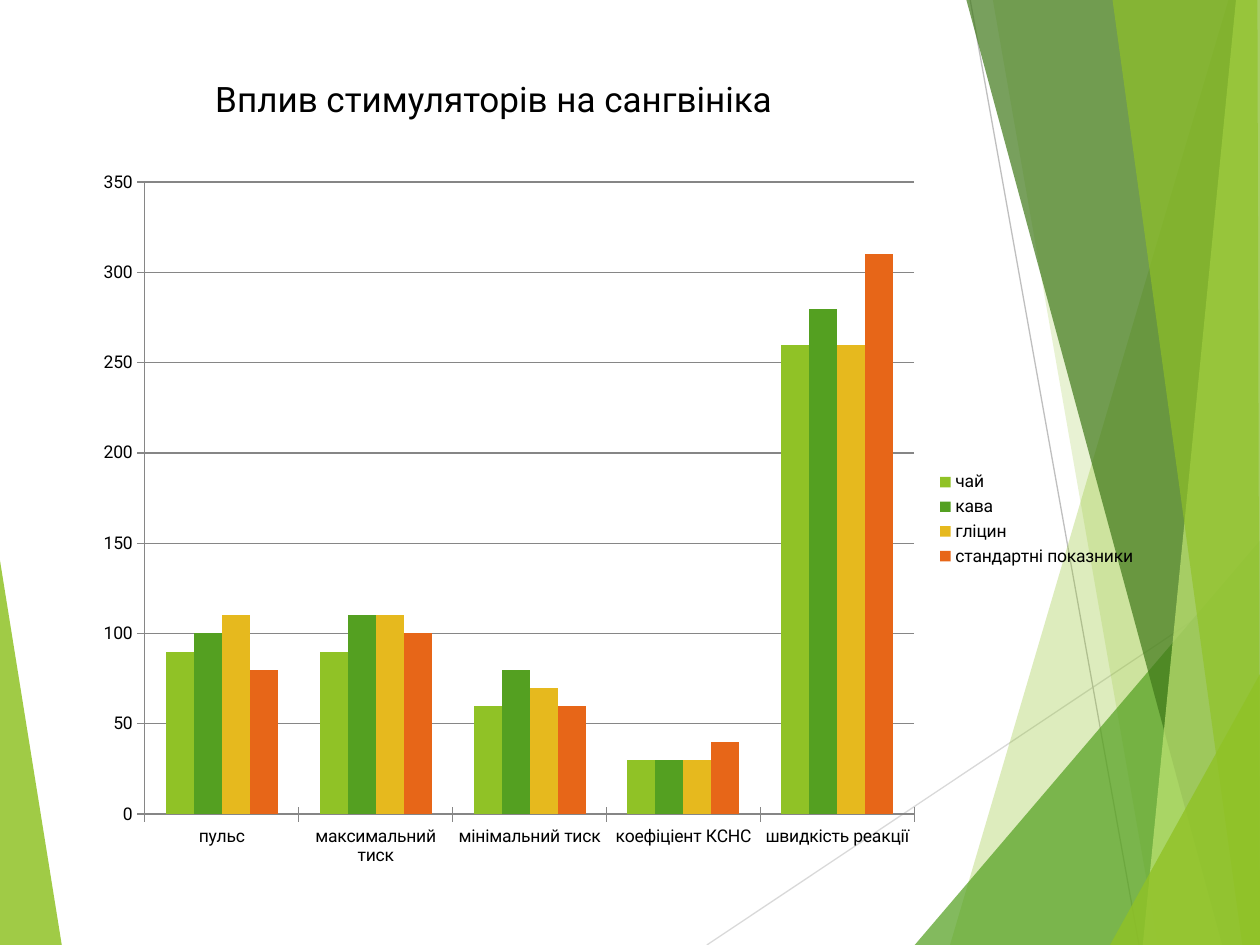
from typing import NamedTuple

from lxml.etree import SubElement
from pptx import Presentation
from pptx.chart.data import CategoryChartData
from pptx.dml.color import RGBColor
from pptx.enum.chart import XL_CHART_TYPE as ChartType
from pptx.enum.chart import XL_LEGEND_POSITION as LegendPosition
from pptx.enum.chart import XL_TICK_MARK as TickMark
from pptx.enum.shapes import MSO_CONNECTOR as Connector
from pptx.oxml import parse_xml
from pptx.oxml.ns import nsdecls, qn
from pptx.util import Inches, Pt

WIDTH, HEIGHT = Inches(10), Inches(7.5)
FONT = "Roboto"
BLACK, GREY = "000000", "868686"
LIME, GREEN, YELLOW, ORANGE = "90C226", "54A021", "E6B91E", "E76618"


class Facet(NamedTuple):
    """A translucent polygon with corners in percent of the slide."""
    corners: tuple
    color: str
    opacity: int


class Ray(NamedTuple):
    """A thin line with ends in percent of the slide."""
    start: tuple
    end: tuple
    color: str


class Series(NamedTuple):
    """One coloured set of columns."""
    name: str
    color: str
    values: tuple


def slant(top_x: float, bottom_x: float, color: str, opacity: int) -> Facet:
    """Describe a full-height facet between a slanted edge and the right side."""
    return Facet(((top_x, 0), (bottom_x, 100), (100, 100), (100, 0)), color, opacity)


def corner(bottom_x: float, right_y: float, color: str, opacity: int) -> Facet:
    """Describe a triangle in the bottom right corner."""
    return Facet(((bottom_x, 100), (100, right_y), (100, 100)), color, opacity)


DECORATION = (
    Facet(((0, 59.33), (4.9, 100), (0, 100)), LIME, 85),
    Ray((56.1, 100), (100, 60.93), "D9D9D9"),
    Ray((77, 0), (90.4, 100), "BFBFBF"),
    slant(97.5, 75.4, LIME, 30),
    slant(78.8, 91.9, LIME, 20),
    corner(72.6, 57.2, GREEN, 72),
    slant(76.7, 97, "3F7819", 70),
    slant(98.1, 90.7, "C0E474", 70),
    Facet(((88.3, 0), (98.6, 100), (100, 100), (99.8, 0)), LIME, 65),
    corner(88.1, 71.33, LIME, 80),
)
CATEGORIES = ("пульс", "максимальний тиск", "мінімальний тиск",
              "коефіціент КСНС", "швидкість реакції")
SERIES = (
    Series("чай", LIME, (90, 90, 60, 30, 260)),
    Series("кава", GREEN, (100, 110, 80, 30, 280)),
    Series("гліцин", YELLOW, (110, 110, 70, 30, 260)),
    Series("стандартні показники", ORANGE, (80, 100, 60, 40, 310)),
)
PLOT_PERCENT = {"x": 5.9, "y": 3.4, "w": 72.1, "h": 87.4}


def rgb(color: str) -> RGBColor:
    """Turn a hex string into a colour."""
    return RGBColor.from_string(color)


def place(x: float, y: float) -> tuple[int, int]:
    """Turn percent of the slide into a position."""
    return round(WIDTH * x / 100), round(HEIGHT * y / 100)


def style_font(font, size: float, color: str = BLACK) -> None:
    """Set the typeface, size and colour of a font."""
    font.name, font.size = FONT, Pt(size)
    font.color.rgb = rgb(color)


def draw_facet(slide, facet: Facet) -> None:
    """Draw one translucent polygon."""
    first, *others = [place(*point) for point in facet.corners]
    builder = slide.shapes.build_freeform(*first)
    builder.add_line_segments(others, close=True)
    shape = builder.convert_to_shape()
    shape.shadow.inherit = False
    shape.line.fill.background()
    shape.fill.solid()
    shape.fill.fore_color.rgb = rgb(facet.color)
    color_element = shape.fill._xPr.find(qn("a:solidFill"))[0]
    SubElement(color_element, qn("a:alpha"), val=str(facet.opacity * 1000))


def draw_ray(slide, ray: Ray) -> None:
    """Draw one thin line."""
    line = slide.shapes.add_connector(
        Connector.STRAIGHT, *place(*ray.start), *place(*ray.end))
    line.line.color.rgb = rgb(ray.color)
    line.line.width = Pt(0.75)
    SubElement(line._element.spPr, qn("a:effectLst"))


def add_text(slide, text: str, *, at: tuple, size: tuple, points: float) -> None:
    """Add a text box, with place and size in percent of the slide."""
    box = slide.shapes.add_textbox(*place(*at), *place(*size))
    box.text_frame.word_wrap = True
    run = box.text_frame.paragraphs[0].add_run()
    run.text = text
    style_font(run.font, points)


def set_plot_area(chart, percent: dict) -> None:
    """Fix the inner plot area in percent of the chart."""
    plot_area = chart._chartSpace.chart.plotArea
    for old in plot_area.findall(qn("c:layout")):
        plot_area.remove(old)
    sizes = "".join(f'<c:{key} val="{value / 100:.3f}"/>'
                    for key, value in percent.items())
    plot_area.insert(0, parse_xml(
        f'<c:layout {nsdecls("c")}><c:manualLayout><c:layoutTarget val="inner"/>'
        f'<c:xMode val="edge"/><c:yMode val="edge"/>{sizes}'
        "</c:manualLayout></c:layout>"))


def add_columns(slide, *, at: tuple, size: tuple) -> None:
    """Add the clustered column chart."""
    data = CategoryChartData()
    data.categories = CATEGORIES
    for series in SERIES:
        data.add_series(series.name, series.values)
    chart = slide.shapes.add_chart(
        ChartType.COLUMN_CLUSTERED, *place(*at), *place(*size), data).chart
    style_font(chart.font, 10)
    chart.has_title = False
    chart.has_legend = True
    chart.legend.position = LegendPosition.RIGHT
    chart.legend.include_in_layout = False
    plot = chart.plots[0]
    plot.gap_width, plot.overlap, plot.vary_by_categories = 150, 0, False
    for drawn, series in zip(plot.series, SERIES):
        drawn.format.fill.solid()
        drawn.format.fill.fore_color.rgb = rgb(series.color)
        drawn.invert_if_negative = False
    values = chart.value_axis
    values.minimum_scale, values.maximum_scale, values.major_unit = 0, 350, 50
    values.has_major_gridlines = True
    for axis in (chart.category_axis, values):
        axis.major_tick_mark = TickMark.CROSS
    for part in (chart.category_axis, values, values.major_gridlines):
        part.format.line.color.rgb = rgb(GREY)
        part.format.line.width = Pt(0.75)
    set_plot_area(chart, PLOT_PERCENT)


def main() -> None:
    """Build and save the slide."""
    presentation = Presentation()
    presentation.slide_width, presentation.slide_height = WIDTH, HEIGHT
    slide = presentation.slides.add_slide(presentation.slide_layouts[6])
    for item in DECORATION:
        draw = draw_facet if isinstance(item, Facet) else draw_ray
        draw(slide, item)
    add_text(slide, "Вплив стимуляторів на сангвініка",
             at=(16.1, 7.55), size=(54.5, 5.87), points=20)
    add_columns(slide, at=(6.5, 16.67), size=(84.7, 76.53))
    presentation.save("out.pptx")


if __name__ == "__main__":
    main()
